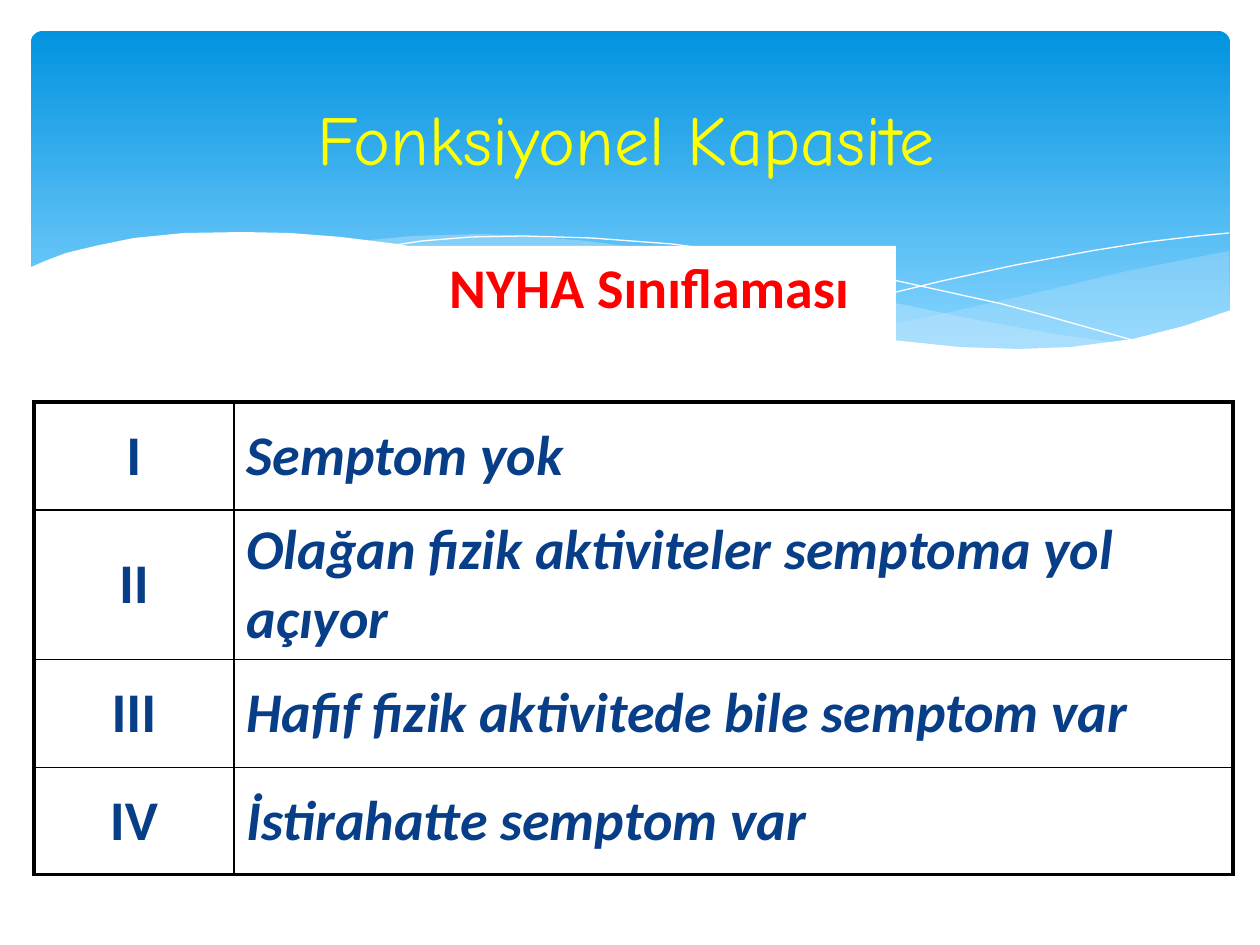
from lxml.etree import SubElement
from pptx import Presentation
from pptx.dml.color import RGBColor
from pptx.enum.shapes import MSO_SHAPE
from pptx.enum.text import MSO_ANCHOR, PP_ALIGN
from pptx.oxml.ns import qn
from pptx.util import Pt

PX = 914400 / 126


def color(value):
    return RGBColor.from_string(value)


def write(frame, text, size=32, font="Calibri", ink="073E87", bold=True,
          italic=False, align=PP_ALIGN.CENTER):
    frame.word_wrap = True
    paragraph = frame.paragraphs[0]
    paragraph.alignment = align
    run = paragraph.add_run()
    run.text = text
    run.font.size = Pt(size)
    run.font.name = font
    run.font.bold = bold
    run.font.italic = italic
    run.font.color.rgb = color(ink)


deck = Presentation()
deck.slide_width, deck.slide_height = round(1260 * PX), round(945 * PX)
slide = deck.slides.add_slide(deck.slide_layouts[6])
shapes = slide.shapes

# Blue header panel
header = shapes.add_shape(MSO_SHAPE.ROUNDED_RECTANGLE,
                          *[round(n * PX) for n in (31, 31, 1199, 340)])
header.adjustments[0] = 0.034
header.shadow.inherit = False
header.line.fill.background()
header.fill.gradient()
header.fill.gradient_angle = 270
for stop, position, shade in zip(header.fill.gradient_stops, (0, 0.9), ("0293E0", "83D3FE")):
    stop.position = position
    stop.color.rgb = color(shade)

# Waves, back to front: points, fill, opacity in percent (no fill means a thin line)
right_wave = [(1229, 251), (1178, 261), (1123, 272), (1048, 290), (982, 305), (919, 319),
              (833, 334), (888, 341), (954, 348), (1012, 350), (1076, 348), (1130, 340),
              (1178, 329), (1230, 311)]
middle_wave = [(1125, 344), (1055, 334), (977, 320), (890, 302), (793, 280), (717, 262),
               (648, 249), (586, 241), (529, 236), (479, 234), (413, 236), (360, 241),
               (431, 251), (509, 266), (619, 292), (713, 312), (799, 329), (876, 340),
               (942, 348), (1017, 350), (1080, 349)]
falling_line = [(389, 246), (422, 241), (471, 237), (524, 236), (591, 238), (672, 244),
                (766, 257), (838, 268), (916, 285), (1002, 304), (1047, 316), (1143, 343)]
rising_line = [(772, 324), (847, 304), (942, 281), (1016, 265), (1091, 251), (1147, 242),
               (1198, 236), (1229, 233)]
white_wave = [(1231, 310), (1184, 326), (1133, 339), (1071, 347), (1019, 349), (959, 347),
              (892, 340), (815, 330), (730, 315), (634, 294), (527, 268), (460, 255),
              (397, 244), (341, 237), (290, 233), (243, 232), (184, 233), (134, 238),
              (95, 246), (66, 253), (45, 261), (29, 268), (29, 415), (1231, 415)]

for points, shade, opacity in [
    (right_wave, "C6E7FC", 29),
    (middle_wave, "C6E7FC", 40),
    (falling_line, None, 100),
    (rising_line, None, 100),
    (white_wave, "FFFFFF", 100),
]:
    builder = shapes.build_freeform(*points[0], scale=PX)
    builder.add_line_segments(points[1:], close=shade is not None)
    wave = builder.convert_to_shape()
    wave.shadow.inherit = False
    if shade is None:
        wave.fill.background()
        wave.line.color.rgb = color("FFFFFF")
        wave.line.width = Pt(0)
        continue
    wave.line.fill.background()
    wave.fill.solid()
    wave.fill.fore_color.rgb = color(shade)
    if opacity < 100:
        tint = wave.fill._xPr.find(f"{qn('a:solidFill')}/{qn('a:srgbClr')}")
        SubElement(tint, qn("a:alpha"), val=str(opacity * 1000))

# Table of the four classes
classes = [
    ("I", "Semptom yok"),
    ("II", "Olağan fizik aktiviteler semptoma yol açıyor"),
    ("III", "Hafif fizik aktivitede bile semptom var"),
    ("IV", "İstirahatte semptom var"),
]
last = len(classes) - 1
table = shapes.add_table(len(classes), 2,
                         *[round(n * PX) for n in (34, 402, 1199, 430)]).table
table.first_row = table.horz_banding = False
for column, width in zip(table.columns, (200, 999)):
    column.width = round(width * PX)
for row, height in zip(table.rows, (108, 107, 108, 107)):
    row.height = round(height * PX)

for r, texts in enumerate(classes):
    for c, text in enumerate(texts):
        cell = table.cell(r, c)
        cell.vertical_anchor = MSO_ANCHOR.MIDDLE
        write(cell.text_frame, text, italic=c == 1,
              align=PP_ALIGN.LEFT if c else PP_ALIGN.CENTER)
        # Thick outer frame, thin inner rules; borders precede the fill in the XML
        properties = cell._tc.get_or_add_tcPr()
        for side, outer in (("L", c == 0), ("R", c == 1), ("T", r == 0), ("B", r == last)):
            border = SubElement(properties, qn(f"a:ln{side}"), w=str(Pt(2.25 if outer else 1)))
            SubElement(SubElement(border, qn("a:solidFill")), qn("a:srgbClr"), val="000000")
        if c == 0:
            cell.fill.solid()
            cell.fill.fore_color.rgb = color("FFFFFF")
        else:
            cell.fill.background()

# Title
title = shapes.add_textbox(*[round(n * PX) for n in (59, 78, 1134, 120)])
title.text_frame.vertical_anchor = MSO_ANCHOR.MIDDLE
write(title.text_frame, "Fonksiyonel Kapasite", size=40, font="Comic Neue",
      ink="FFFF00", bold=False)

# Subtitle on a white panel
subtitle = shapes.add_textbox(*[round(n * PX) for n in (403, 246, 493, 95)])
subtitle.fill.solid()
subtitle.fill.fore_color.rgb = color("FFFFFF")
write(subtitle.text_frame, "NYHA Sınıflaması", ink="FF0000")

deck.save("out.pptx")
